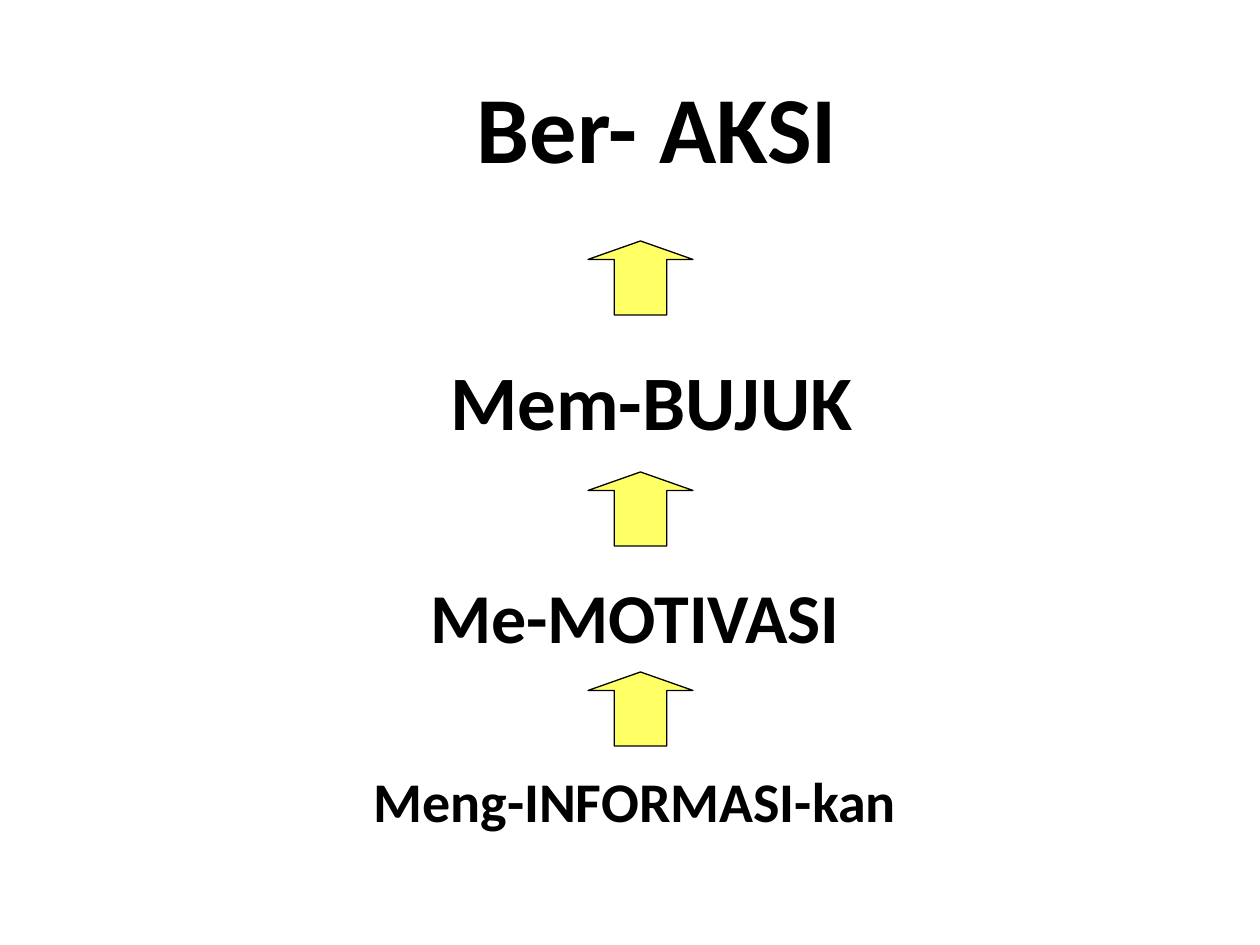
from dataclasses import dataclass

from pptx import Presentation
from pptx.dml.color import RGBColor
from pptx.enum.shapes import MSO_SHAPE
from pptx.enum.text import MSO_ANCHOR, MSO_AUTO_SIZE, PP_ALIGN
from pptx.slide import Slide
from pptx.util import Emu, Pt

PX_PER_INCH = 126
COLORS = {"ink": "000000", "arrow": "FFFF66", "background": "FFFFFF"}
ARROW_LEFT, ARROW_WIDTH, ARROW_HEIGHT = 588, 105, 74
ARROW_TOPS = (672, 472, 241)


@dataclass(frozen=True)
class Stage:
    label: str
    left: int
    top: int
    width: int
    height: int
    size: int


STAGES = (
    Stage("Meng-INFORMASI-kan", 315, 760, 640, 80, 32),
    Stage("Me-MOTIVASI", 325, 567, 620, 97, 40),
    Stage("Mem-BUJUK", 284, 347, 735, 105, 44),
    Stage("Ber- AKSI", 200, 63, 914, 126, 54),
)


def px(length: int) -> Emu:
    return Emu(round(length * 914400 / PX_PER_INCH))


def color(name: str) -> RGBColor:
    return RGBColor.from_string(COLORS[name])


def write(frame, text: str, *, size: int, bold: bool = True,
          font: str = "Calibri", ink: str = "ink",
          align: PP_ALIGN = PP_ALIGN.CENTER) -> None:
    frame.word_wrap = True
    frame.auto_size = MSO_AUTO_SIZE.SHAPE_TO_FIT_TEXT
    frame.vertical_anchor = MSO_ANCHOR.TOP
    paragraph = frame.paragraphs[0]
    paragraph.alignment = align
    run = paragraph.add_run()
    run.text = text
    run.font.name = font
    run.font.size = Pt(size)
    run.font.bold = bold
    run.font.color.rgb = color(ink)


def draw_stage(slide: Slide, stage: Stage) -> None:
    label = slide.shapes.add_textbox(
        px(stage.left), px(stage.top), px(stage.width), px(stage.height))
    write(label.text_frame, stage.label, size=stage.size)


def draw_arrow(slide: Slide, top: int) -> None:
    arrow = slide.shapes.add_shape(
        MSO_SHAPE.UP_ARROW, px(ARROW_LEFT), px(top), px(ARROW_WIDTH), px(ARROW_HEIGHT))
    arrow.adjustments[0] = 0.5
    arrow.adjustments[1] = 0.25
    arrow.shadow.inherit = False
    arrow.fill.solid()
    arrow.fill.fore_color.rgb = color("arrow")
    arrow.line.color.rgb = color("ink")
    arrow.line.width = Pt(0.75)


def main() -> None:
    deck = Presentation()
    deck.slide_width = px(1260)
    deck.slide_height = px(945)
    slide = deck.slides.add_slide(deck.slide_layouts[6])
    slide.background.fill.solid()
    slide.background.fill.fore_color.rgb = color("background")
    for stage in STAGES:
        draw_stage(slide, stage)
    for top in ARROW_TOPS:
        draw_arrow(slide, top)
    deck.save("out.pptx")


if __name__ == "__main__":
    main()
